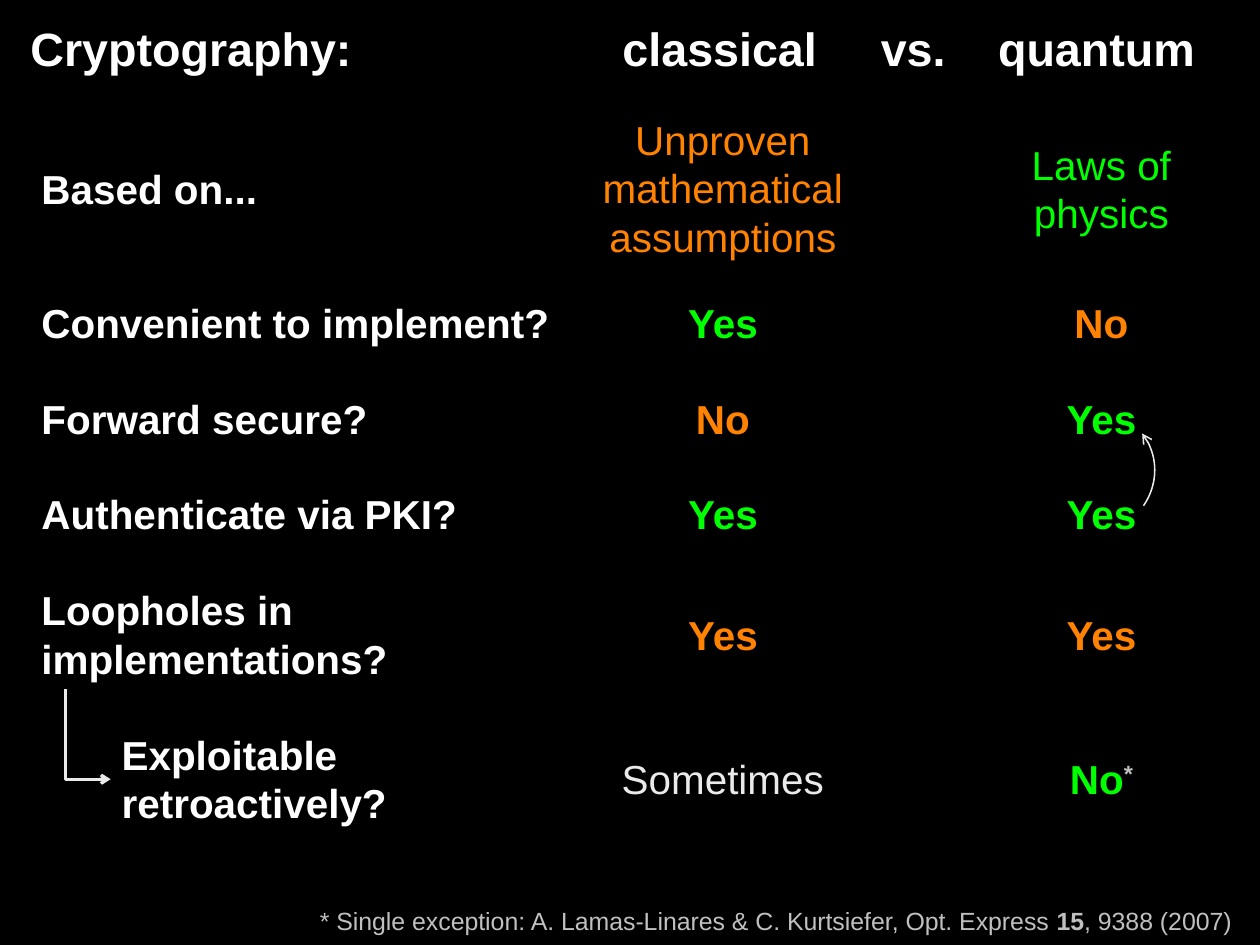
import pptx
import pptx.dml.color
import pptx.enum.shapes
import pptx.enum.text
import pptx.oxml
import pptx.oxml.ns
import pptx.util
from pptx.util import Cm

RGBColor = pptx.dml.color.RGBColor
BLACK = RGBColor(0x00, 0x00, 0x00)
WHITE = RGBColor(0xFF, 0xFF, 0xFF)
PALE = RGBColor(0xEA, 0xEA, 0xEA)
GREY = RGBColor(0xC0, 0xC0, 0xC0)
GREEN = RGBColor(0x00, 0xFF, 0x00)
ORANGE = RGBColor(0xFF, 0x82, 0x00)

ALIGN = pptx.enum.text.PP_ALIGN
SHAPE = pptx.enum.shapes.MSO_SHAPE
qn = pptx.oxml.ns.qn

presentation = pptx.Presentation()
presentation.slide_width = Cm(28.58)
presentation.slide_height = Cm(21.44)
slide = presentation.slides.add_slide(presentation.slide_layouts[6])


def add_text(text, left, top, width, height, size, color, bold=False, align=ALIGN.LEFT):
    """Add a wrapped text box, one paragraph a line, and return its text frame."""
    box = slide.shapes.add_textbox(Cm(left), Cm(top), Cm(width), Cm(height))
    frame = box.text_frame
    frame.word_wrap = True
    frame.text = text
    for paragraph in frame.paragraphs:
        paragraph.alignment = align
        paragraph.font.name = "Arial"
        paragraph.font.size = pptx.util.Pt(size)
        paragraph.font.bold = bold
        paragraph.font.color.rgb = color
    return frame


def style_arrow(shape, width):
    """Give a line its colour, width and an open arrowhead at its end."""
    shape.line.color.rgb = PALE
    shape.line.width = pptx.util.Pt(width)
    line = shape.line._get_or_add_ln()
    pptx.oxml.parse_xml  # arrowhead goes after the line fill
    head = line.makeelement(qn("a:tailEnd"), {"type": "arrow"})
    line.append(head)


background = slide.shapes.add_shape(
    SHAPE.RECTANGLE, 0, 0, presentation.slide_width, presentation.slide_height)
background.shadow.inherit = False
background.fill.solid()
background.fill.fore_color.rgb = BLACK
background.line.fill.background()

# Heading, with its words on tab stops
heading = add_text("", 0.69, 0.33, 27.89, 1.6, 30, WHITE, True)
heading.margin_left = heading.margin_right = 0
heading_paragraph = heading.paragraphs[0]
heading_paragraph.add_run().text = "Cryptography:\tclassical\tvs.\tquantum"
properties = heading_paragraph._p.get_or_add_pPr()
tabs = properties.makeelement(qn("a:tabLst"), {})
for position in (13.43, 19.29, 21.95):
    tabs.append(tabs.makeelement(qn("a:tab"), {"pos": str(Cm(position)), "algn": "l"}))
properties.insert(0, tabs)

# Comparison rows: middle, label, label lines, label left, then both answers
rows = [
    (4.29, "Based on...", 1, 0.69,
     ("Unproven mathematical assumptions", 3, ORANGE, False),
     ("Laws of\nphysics", 2, GREEN, False)),
    (7.32, "Convenient to implement?", 1, 0.69,
     ("Yes", 1, GREEN, True), ("No", 1, ORANGE, True)),
    (9.5, "Forward secure?", 1, 0.69,
     ("No", 1, ORANGE, True), ("Yes", 1, GREEN, True)),
    (11.66, "Authenticate via PKI?", 1, 0.69,
     ("Yes", 1, GREEN, True), ("Yes", 1, GREEN, True)),
    (14.4, "Loopholes in implementations?", 2, 0.69,
     ("Yes", 1, ORANGE, True), ("Yes", 1, ORANGE, True)),
    (17.68, "Exploitable retroactively?", 2, 2.51,
     ("Sometimes", 1, PALE, False), ("No", 1, GREEN, True)),
]
answer_columns = [(12.5, 7.8), (21.44, 7.09)]
label_right = 12.88
for middle, label, label_lines, label_left, *answers in rows:
    height = 0.25 + 1.12 * label_lines
    add_text(label, label_left, middle - height / 2, label_right - label_left, height,
             26, WHITE, True)
    for (left, width), (answer, lines, color, bold) in zip(answer_columns, answers):
        height = 0.25 + 1.12 * lines
        answer_frame = add_text(answer, left, middle - height / 2, width, height,
                                26, color, bold, ALIGN.CENTER)

# The last answer carries the footnote mark
mark = answer_frame.paragraphs[0].add_run()
mark.text = "*"
mark.font.color.rgb = GREY
mark.font._element.set("baseline", "30000")

footnote = add_text("", 0.43, 20.27, 27.76, 1.07, 16, GREY, align=ALIGN.RIGHT)
footnote.vertical_anchor = pptx.enum.text.MSO_ANCHOR.BOTTOM
for text, bold in (
        ("* Single exception: A. Lamas-Linares & C. Kurtsiefer, Opt. Express ", False),
        ("15", True), (", 9388 (2007)", False)):
    run = footnote.paragraphs[0].add_run()
    run.text = text
    run.font.bold = bold

# Elbow arrow from the loopholes to their exploitation
elbow = slide.shapes.add_connector(
    pptx.enum.shapes.MSO_CONNECTOR.ELBOW, Cm(0.97), Cm(16.14), Cm(3.02), Cm(17.17))
elbow_properties = elbow._element.spPr
elbow_properties.find(qn("a:prstGeom")).set("prst", "bentConnector2")
elbow_properties.xfrm.set("rot", "16200000")
elbow_properties.xfrm.set("flipH", "1")
style_arrow(elbow, 2)
elbow_properties.append(elbow_properties.makeelement(qn("a:effectLst"), {}))

# Curved arrow from authentication up to forward security
curve = slide.shapes.add_shape(SHAPE.ARC, Cm(23.16), Cm(9.32), Cm(3.05), Cm(2.84))
curve.shadow.inherit = False
curve.fill.background()
curve.adjustments[0] = 183.49
curve.adjustments[1] = 7.57
curve.rotation = 336.2
curve._element.spPr.xfrm.set("flipV", "1")
style_arrow(curve, 1)

presentation.save("out.pptx")
